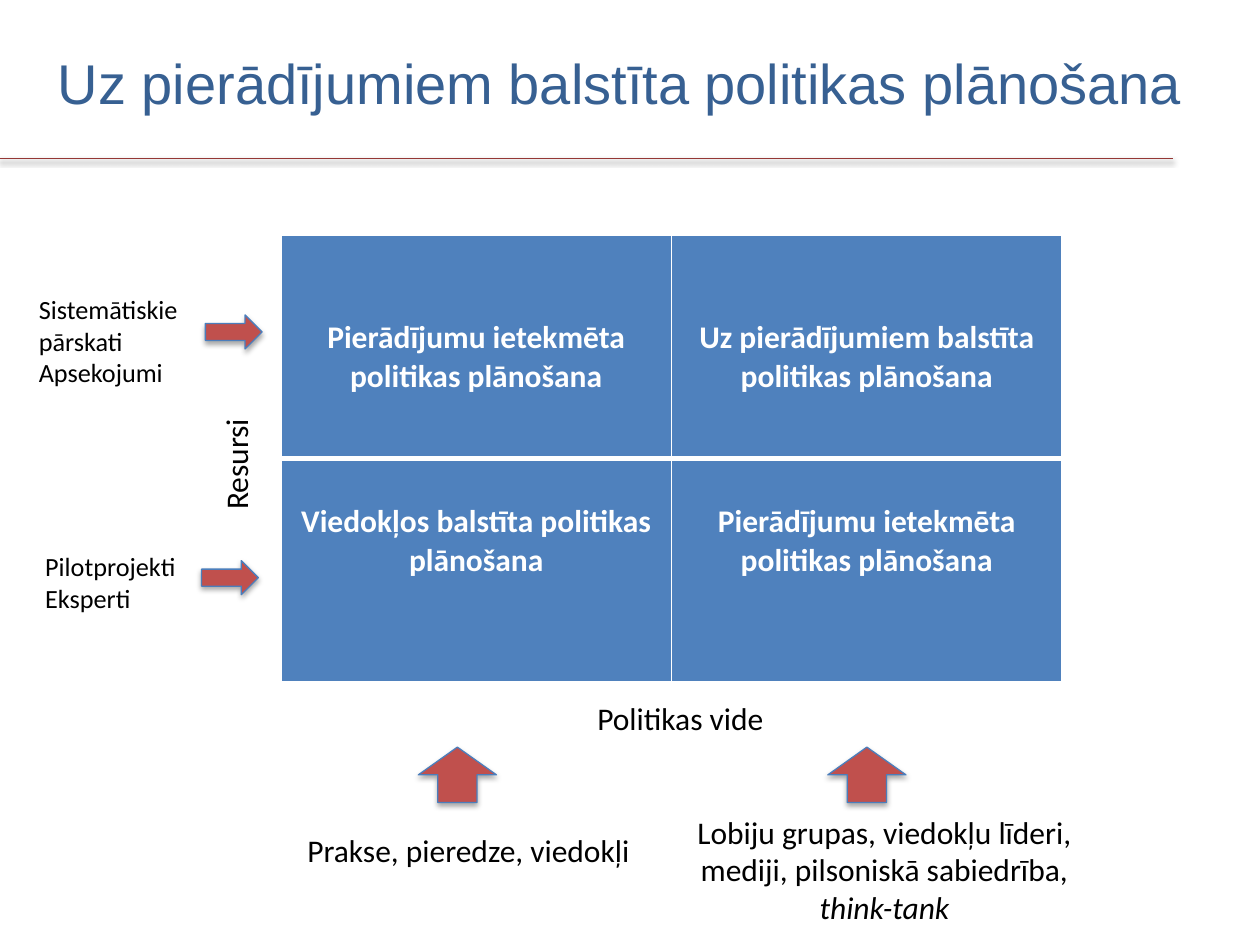
from lxml.etree import SubElement
from pptx import Presentation
from pptx.dml.color import RGBColor
from pptx.enum.shapes import MSO_CONNECTOR, MSO_SHAPE
from pptx.enum.text import MSO_ANCHOR, PP_ALIGN
from pptx.oxml import parse_xml
from pptx.oxml.ns import nsdecls, qn
from pptx.util import Inches, Pt

BLACK = RGBColor(0, 0, 0)
WHITE = RGBColor(255, 255, 255)
NAVY = RGBColor(0x37, 0x60, 0x92)
BLUE = RGBColor(0x4F, 0x81, 0xBD)
EDGE = RGBColor(0x4B, 0x7E, 0xBC)
RED = RGBColor(0xC0, 0x50, 0x4D)
WINE = RGBColor(0x95, 0x37, 0x35)

COLS, ROWS = 100, 75
LEFT, MID = PP_ALIGN.LEFT, PP_ALIGN.CENTER


class Board:
    """Draws on one slide; lengths are columns and rows of a 100 x 75 grid."""

    def __init__(self, deck, font="Calibri", size=18):
        self.slide = deck.slides.add_slide(deck.slide_layouts[6])
        self.shapes = self.slide.shapes
        self.col = deck.slide_width / COLS
        self.row = deck.slide_height / ROWS
        self.font, self.size = font, size

    def place(self, x, y, w, h):
        return (round(x * self.col), round(y * self.row),
                round(w * self.col), round(h * self.row))

    def add_run(self, par, words, align, size=None, font=None, color=BLACK,
                bold=False, italic=False):
        par.alignment = align
        run = par.add_run()
        run.text = words
        face = run.font
        face.name, face.size = font or self.font, Pt(size or self.size)
        face.bold, face.italic = bold, italic
        face.color.rgb = color

    def text(self, box, lines, align=LEFT, wrap=True, turn=None,
             anchor=MSO_ANCHOR.TOP, **style):
        """Each line is a list of (words, italic) runs."""
        frame = self.shapes.add_textbox(*self.place(*box)).text_frame
        frame.word_wrap = wrap
        frame.vertical_anchor = anchor
        if turn:
            frame._txBody.bodyPr.set("vert", turn)
        for i, line in enumerate(lines):
            par = frame.add_paragraph() if i else frame.paragraphs[0]
            for words, italic in line:
                self.add_run(par, words, align, italic=italic, **style)

    def shade(self, shape, alpha, drop):
        shape._element.spPr.append(parse_xml(
            f'<a:effectLst {nsdecls("a")}>'
            f'<a:outerShdw blurRad="{Pt(3.1)}" dist="{Pt(drop)}" dir="5400000" rotWithShape="0">'
            f'<a:srgbClr val="000000"><a:alpha val="{alpha * 1000}"/></a:srgbClr>'
            '</a:outerShdw></a:effectLst>'))

    def rule(self, x, y, end):
        left, top, width, _ = self.place(x, y, end - x, 0)
        line = self.shapes.add_connector(
            MSO_CONNECTOR.STRAIGHT, left, top, left + width, top)
        line.line.color.rgb, line.line.width = WINE, Pt(0.75)
        self.shade(line, 38, 1.6)

    def arrow(self, kind, box):
        shape = self.shapes.add_shape(kind, *self.place(*box))
        shape.fill.solid()
        shape.fill.fore_color.rgb = RED
        shape.line.color.rgb, shape.line.width = EDGE, Pt(0.75)
        self.shade(shape, 35, 1.8)

    def border(self, cell, widths):
        props = cell._tc.get_or_add_tcPr()
        for side, width in zip("LRTB", widths):
            line = SubElement(props, qn(f"a:ln{side}"), w=str(Pt(width)))
            fill = SubElement(line, qn("a:solidFill"))
            SubElement(fill, qn("a:srgbClr"), val=str(WHITE))

    def table(self, box, rows, tops):
        """Fill the cells; tops holds the inches above the text in each row."""
        grid = self.shapes.add_table(
            len(rows), len(rows[0]), *self.place(*box)).table
        for r, line in enumerate(rows):
            for c, words in enumerate(line):
                cell = grid.cell(r, c)
                self.border(cell, (1, 1, 3 if r else 1, 1 if r else 3))
                cell.fill.solid()
                cell.fill.fore_color.rgb = BLUE
                cell.margin_top = Inches(tops[r])
                self.add_run(cell.text_frame.paragraphs[0], words, MID,
                             color=WHITE, bold=True)


def plain(*lines):
    return [[(line, False)] for line in lines]


def main():
    deck = Presentation()
    deck.slide_width, deck.slide_height = Inches(10), Inches(7.5)
    board = Board(deck)

    board.text((3.6, 0.3, 94.8, 12.5),
               plain("Uz pierādījumiem balstīta politikas plānošana"),
               anchor=MSO_ANCHOR.MIDDLE, size=32, font="Arial", color=NAVY)
    board.rule(0, 12.6, 93.1)

    mixed = "Pierādījumu ietekmēta politikas plānošana"
    board.table((22.3, 18.7, 62, 35.4), [
        (mixed, "Uz pierādījumiem balstīta politikas plānošana"),
        ("Viedokļos balstīta politikas plānošana", mixed),
    ], tops=(0.66, 0.35))

    board.text((19.1, 55, 69.8, 4), plain("Politikas vide"), MID)
    board.text((16.7, 21.2, 5, 31.3), plain("Resursi"), MID, turn="vert270")

    board.text((23.4, 65.5, 29.1, 4), plain("Prakse, pieredze, viedokļi"))
    board.text((53.4, 64, 33.6, 10.1), [[
        ("Lobiju grupas, viedokļu līderi, mediji, pilsoniskā sabiedrība, ", False),
        ("think-tank", True)]], MID)
    for x in (33.2, 65.7):
        board.arrow(MSO_SHAPE.UP_ARROW, (x, 59.3, 6.2, 4.4))

    board.text((2.1, 22.8, 13.4, 8.6),
               plain("Sistemātiskie pārskati", "Apsekojumi"), size=15)
    board.text((2.6, 43.2, 12.5, 6.1),
               plain("Pilotprojekti", "Eksperti"), wrap=False, size=15)
    for x, y in ((16.3, 25), (16, 44.5)):
        board.arrow(MSO_SHAPE.RIGHT_ARROW, (x, y, 4.5, 2.7))

    deck.save("out.pptx")


if __name__ == "__main__":
    main()
